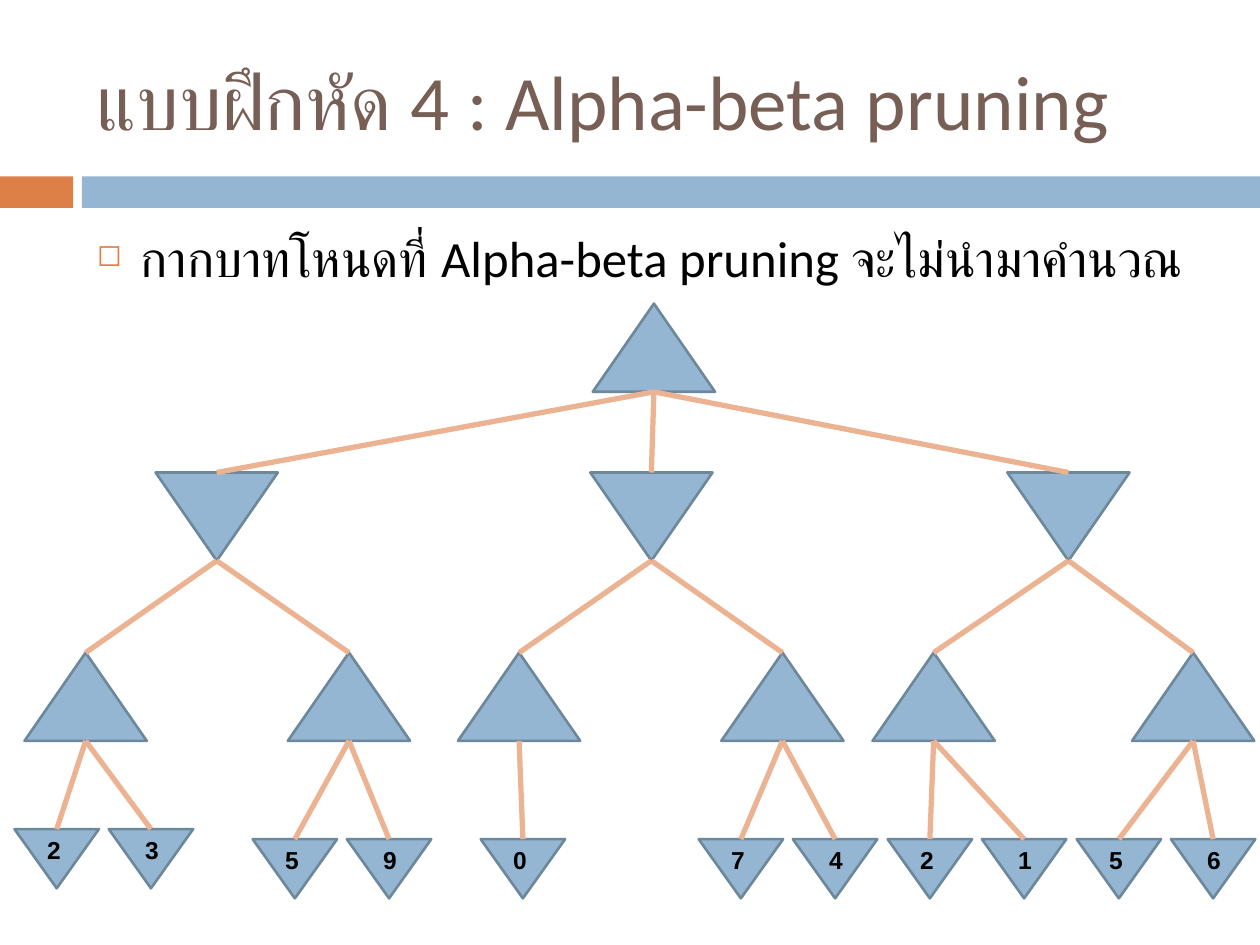
import lxml.etree
import pptx
import pptx.dml.color
import pptx.enum.shapes
import pptx.enum.text
import pptx.oxml.ns
import pptx.util

RGB = pptx.dml.color.RGBColor
KIND = pptx.enum.shapes.MSO_SHAPE
BLUE = RGB(0x94, 0xB6, 0xD2)
EDGE = RGB(0x6D, 0x87, 0x9B)
RUST = RGB(0xDD, 0x80, 0x47)
PEACH = RGB(0xEB, 0xB3, 0x91)
BROWN = RGB(0x77, 0x5F, 0x55)
BLACK = RGB(0, 0, 0)
COLS, ROWS = 100, 75
BIG, SMALL = (9.7, 7), (6.7, 4.7)
LEVELS = (0, 13.4, 27.7, 42.5)
LEAF_GAP = 7.48
ROOT = 51.9
TREE = [
    (17.2, [(6.8, 4.5, "23", 0.8), (27.7, 23.4, "59", 0)]),
    (51.7, [(41.2, 41.5, "0", 0), (62.1, 58.8, "74", 0)]),
    (84.8, [(74.1, 73.8, "21", 0), (94.7, 88.8, "56", 0)]),
]


def unit(*vals):
    """Turn grid columns or rows into lengths."""
    return [pptx.util.Inches(val / 10) for val in vals]


def tag(parent, name, **attrs):
    """Append a DrawingML element."""
    return lxml.etree.SubElement(parent, pptx.oxml.ns.qn(name), attrs)


def block(slide, kind, box, fill, line=None):
    """Draw a filled shape in a box."""
    shape = slide.shapes.add_shape(kind, *unit(*box))
    shape.shadow.inherit = False
    shape.fill.solid()
    shape.fill.fore_color.rgb = fill
    if line is None:
        shape.line.fill.background()
    else:
        shape.line.color.rgb = line
        shape.line.width = pptx.util.Pt(1.5)
    return shape


def write(slide, box, text, size, font, color, bold=False):
    """Place one line of text in a box."""
    frame = slide.shapes.add_textbox(*unit(*box)).text_frame
    frame.word_wrap = True
    frame.text = text
    face = frame.paragraphs[0].runs[0].font
    face.size, face.name, face.bold = pptx.util.Pt(size), font, bold
    face.color.rgb = color
    return frame


def band(slide, box):
    """Draw the two-colour band under the title."""
    left, top, width, height = box
    block(slide, KIND.RECTANGLE, (left, top, 0.058 * width, height), RUST)
    block(slide, KIND.RECTANGLE,
          (left + 0.065 * width, top, 0.935 * width, height), BLUE)


def title(slide, box):
    """Write the slide title."""
    frame = write(slide, box, "แบบฝึกหัด 4 : Alpha-beta pruning", 44, "Calibri", BROWN)
    frame.vertical_anchor = pptx.enum.text.MSO_ANCHOR.MIDDLE


def task(slide, box):
    """Write the bulleted task."""
    text = "กากบาทโหนดที่ Alpha-beta pruning จะไม่นำมาคำนวณ"
    para = write(slide, box, text, 29, "Calibri", BLACK).paragraphs[0]
    para.space_before = pptx.util.Pt(7)
    props = para._p.get_or_add_pPr()
    hang = unit(3.5)[0]
    props.set("marL", str(hang))
    props.set("indent", str(-hang))
    tag(tag(props, "a:buClr"), "a:srgbClr", val=str(RUST))
    tag(props, "a:buSzPct", val="60000")
    tag(props, "a:buChar", char="◻")


def node(slide, mid, top, size, down=False):
    """Draw a triangle and return its top and bottom points."""
    wide, high = size
    shape = block(slide, KIND.ISOSCELES_TRIANGLE,
                  (mid - wide / 2, top, wide, high), BLUE, EDGE)
    shape.rotation = 180 if down else 0
    return (mid, top), (mid, top + high)


def link(slide, start, end):
    """Draw a tree edge between two points."""
    line = slide.shapes.add_connector(
        pptx.enum.shapes.MSO_CONNECTOR.STRAIGHT, *unit(*start, *end))
    line.line.color.rgb = PEACH
    line.line.width = pptx.util.Pt(3)
    tag(line._element.spPr, "a:effectLst")


def leaves(slide, base, first, top, marks):
    """Draw the numbered leaves under a node."""
    for rank, mark in enumerate(marks):
        mid = first + rank * LEAF_GAP
        tip, _ = node(slide, mid, top, SMALL, True)
        link(slide, base, tip)
        left = mid - SMALL[0] / 2 + 1.6 + 0.3 * rank
        write(slide, (left, top, 4.7, 3.4), mark, 14, "Arial", BLACK, True)


def tree(slide, box):
    """Draw the game tree inside a box."""
    left, top, width, _ = box
    scale = width / COLS
    tops = [top + level for level in LEVELS]
    _, root = node(slide, left + ROOT * scale, tops[0], BIG)
    for mid, kids in TREE:
        tip, low = node(slide, left + mid * scale, tops[1], BIG, True)
        link(slide, root, tip)
        for kid, first, marks, lift in kids:
            peak, base = node(slide, left + kid * scale, tops[2], BIG)
            link(slide, low, peak)
            leaves(slide, base, left + first * scale, tops[3] - lift, marks)


def main():
    """Build and save the slide."""
    deck = pptx.Presentation()
    deck.slide_width, deck.slide_height = unit(COLS, ROWS)
    slide = deck.slides.add_slide(deck.slide_layouts[6])
    band(slide, (0, 14, COLS, 2.5))
    title(slide, (6.7, 2.5, 89.2, 10.8))
    task(slide, (6.7, 17.5, 89.2, 49.2))
    tree(slide, (0, 24.1, COLS, 47.2))
    deck.save("out.pptx")


if __name__ == "__main__":
    main()
